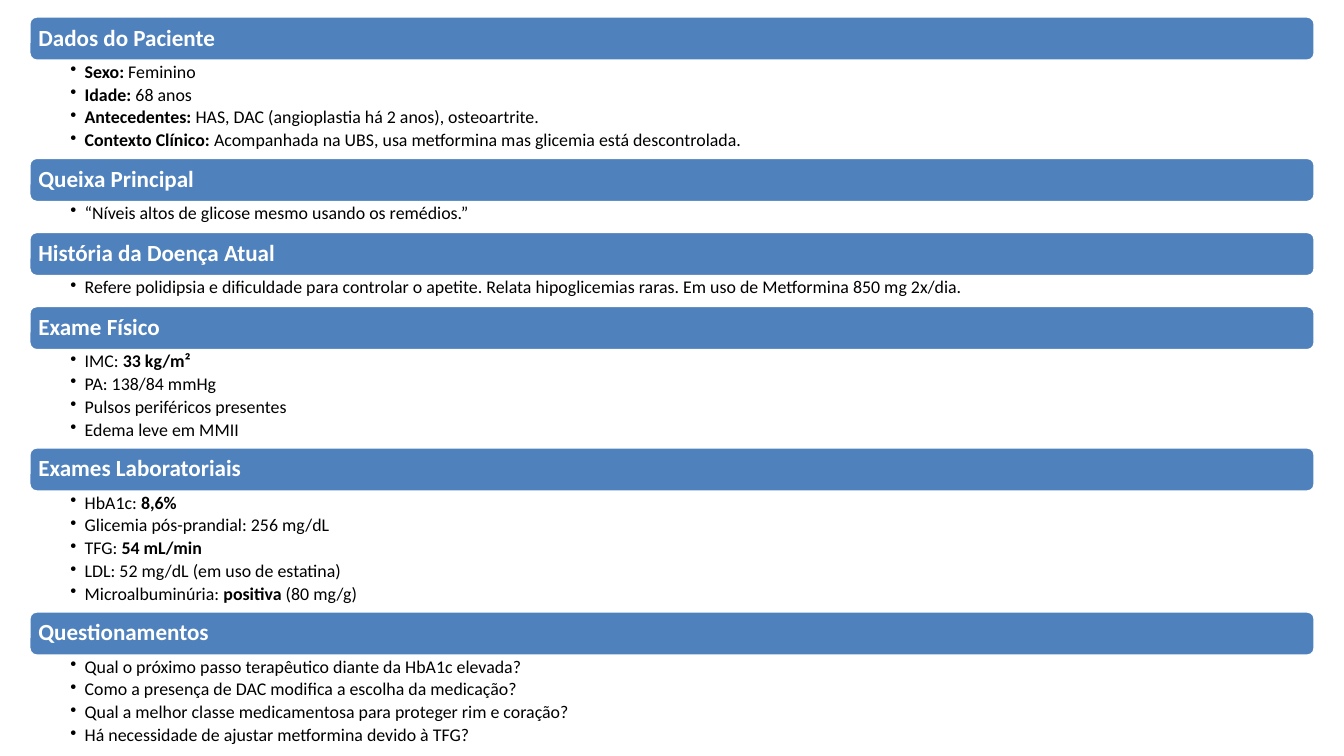
from dataclasses import dataclass

from lxml.etree import SubElement
from pptx import Presentation
from pptx.dml.color import RGBColor
from pptx.enum.shapes import MSO_SHAPE
from pptx.enum.text import MSO_ANCHOR, PP_ALIGN
from pptx.oxml.ns import qn
from pptx.util import Inches, Pt


@dataclass(frozen=True)
class Theme:
    font: str = "Calibri"
    bar: RGBColor = RGBColor(0x4F, 0x81, 0xBD)
    white: RGBColor = RGBColor(0xFF, 0xFF, 0xFF)
    black: RGBColor = RGBColor(0x00, 0x00, 0x00)
    heading: int = 22
    body: int = 17
    outline: int = 2


THEME = Theme()
LEFT, TOP, WIDTH = 0.39, 0.22, 17
BAR_HEIGHT = 0.58
LIST_HEIGHTS = {1: 0.4, 4: 1.29, 5: 1.59}

SECTIONS = [
    ("Dados do Paciente", [
        "**Sexo:** Feminino",
        "**Idade:** 68 anos",
        "**Antecedentes:** HAS, DAC (angioplastia há 2 anos), osteoartrite.",
        "**Contexto Clínico:** Acompanhada na UBS, usa metformina mas glicemia está descontrolada.",
    ]),
    ("Queixa Principal", [
        "“Níveis altos de glicose mesmo usando os remédios.”",
    ]),
    ("História da Doença Atual", [
        "Refere polidipsia e dificuldade para controlar o apetite. "
        "Relata hipoglicemias raras. Em uso de Metformina 850 mg 2x/dia.",
    ]),
    ("Exame Físico", [
        "IMC: **33 kg/m²**",
        "PA: 138/84 mmHg",
        "Pulsos periféricos presentes",
        "Edema leve em MMII",
    ]),
    ("Exames Laboratoriais", [
        "HbA1c: **8,6%**",
        "Glicemia pós-prandial: 256 mg/dL",
        "TFG: **54 mL/min**",
        "LDL: 52 mg/dL (em uso de estatina)",
        "Microalbuminúria: **positiva** (80 mg/g)",
    ]),
    ("Questionamentos", [
        "Qual o próximo passo terapêutico diante da HbA1c elevada?",
        "Como a presença de DAC modifica a escolha da medicação?",
        "Qual a melhor classe medicamentosa para proteger rim e coração?",
        "Há necessidade de ajustar metformina devido à TFG?",
    ]),
]


def set_frame(tf, left, top, right, bottom, anchor):
    tf.word_wrap = True
    tf.margin_left, tf.margin_top = Inches(left), Inches(top)
    tf.margin_right, tf.margin_bottom = Inches(right), Inches(bottom)
    tf.vertical_anchor = anchor


def set_spacing(p, after_percent):
    p.alignment = PP_ALIGN.LEFT
    p.line_spacing = 0.9
    after = SubElement(p._p.get_or_add_pPr(), qn("a:spcAft"))
    SubElement(after, qn("a:spcPct")).set("val", str(after_percent * 1000))


def set_bullet(p):
    p.level = 1
    pPr = p._p.get_or_add_pPr()
    pPr.set("marL", str(Inches(0.19)))
    pPr.set("indent", str(Inches(-0.19)))
    SubElement(pPr, qn("a:buChar")).set("char", "•")


def add_run(p, text, size, color, bold):
    r = p.add_run()
    r.text = text
    r.font.name = THEME.font
    r.font.size = Pt(size)
    r.font.color.rgb = color
    r.font.bold = bold


def add_heading(s, title, top):
    sp = s.shapes.add_shape(MSO_SHAPE.ROUNDED_RECTANGLE, Inches(LEFT), Inches(top),
                            Inches(WIDTH), Inches(BAR_HEIGHT))
    sp.shadow.inherit = False
    sp.fill.solid()
    sp.fill.fore_color.rgb = THEME.bar
    sp.line.color.rgb = THEME.white
    sp.line.width = Pt(THEME.outline)
    set_frame(sp.text_frame, 0.09, 0.09, 0.09, 0.09, MSO_ANCHOR.MIDDLE)
    p = sp.text_frame.paragraphs[0]
    set_spacing(p, 35)
    add_run(p, title, THEME.heading, THEME.white, True)


def add_list(s, items, top, height):
    sp = s.shapes.add_textbox(Inches(LEFT), Inches(top), Inches(WIDTH), Inches(height))
    tf = sp.text_frame
    set_frame(tf, 0.54, 0.03, 0.17, 0.03, MSO_ANCHOR.TOP)
    for i, item in enumerate(items):
        p = tf.add_paragraph() if i else tf.paragraphs[0]
        set_spacing(p, 20)
        set_bullet(p)
        for j, text in enumerate(item.split("**")):
            if text:
                add_run(p, text, THEME.body, THEME.black, j % 2 == 1)


def main():
    prs = Presentation()
    prs.slide_width, prs.slide_height = Inches(17.78), Inches(10)
    s = prs.slides.add_slide(prs.slide_layouts[6])
    top = TOP
    for title, items in SECTIONS:
        height = LIST_HEIGHTS[len(items)]
        add_heading(s, title, top)
        add_list(s, items, top + BAR_HEIGHT, height)
        top += BAR_HEIGHT + height
    prs.save("out.pptx")


if __name__ == "__main__":
    main()
